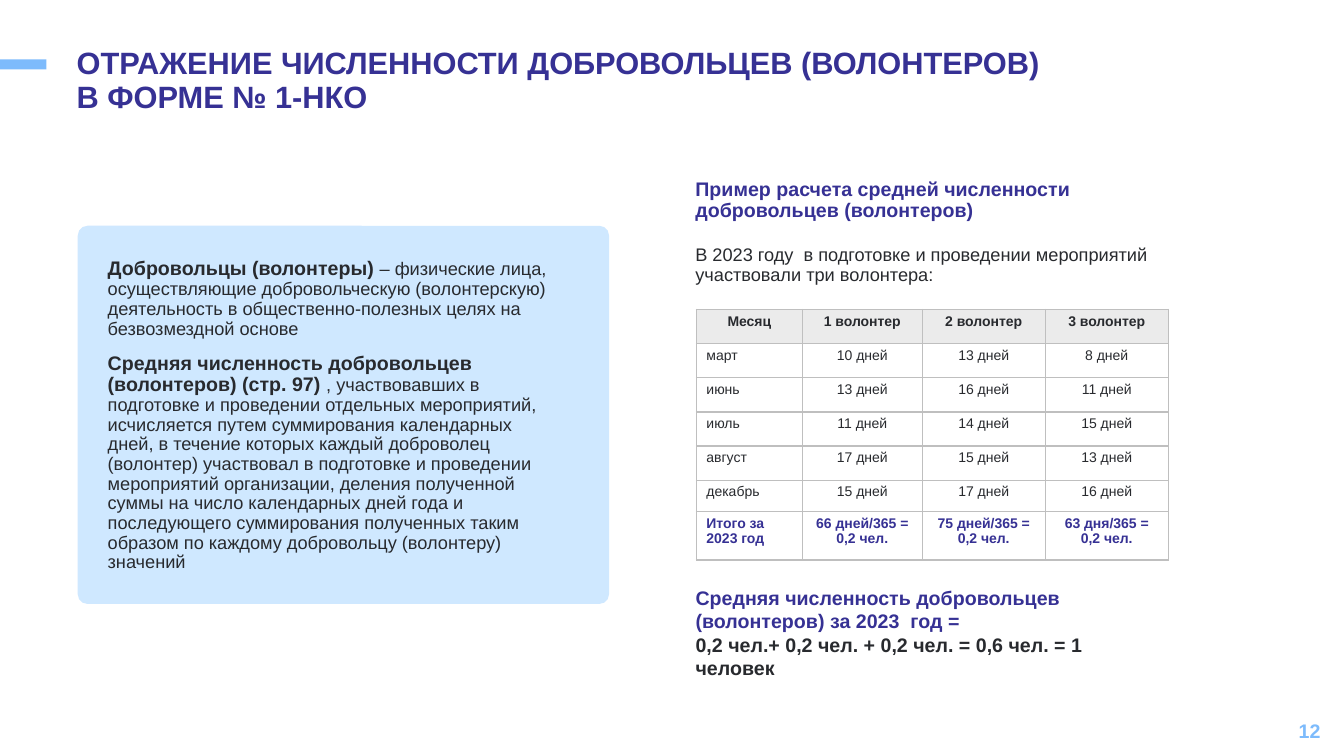
"""Slide on counting volunteers in form 1-НКО."""
import pptx
import pptx.util
import pptx.dml.color
import pptx.enum.shapes
import pptx.enum.text
from lxml import etree

Cm, Pt = pptx.util.Cm, pptx.util.Pt
Shape = pptx.enum.shapes.MSO_SHAPE
Align = pptx.enum.text.PP_ALIGN
Anchor = pptx.enum.text.MSO_ANCHOR
NS = "http://schemas.openxmlformats.org/drawingml/2006/main"
HUES = {"navy": "363194", "sky": "7DBBFC", "pale": "CFE8FF", "ink": "282A2E",
        "head": "EBEBEB", "grid": "BFBFBF", "white": "FFFFFF"}


def tint(name):
    return pptx.dml.color.RGBColor.from_string(HUES[name])


def write(par, runs, align=Align.LEFT, space=None, tab=None):
    props = par._p.get_or_add_pPr()
    props.set("marL", "0")
    props.set("indent", "0")
    etree.SubElement(props, f"{{{NS}}}buNone")
    if tab:
        stops = etree.SubElement(props, f"{{{NS}}}tabLst")
        etree.SubElement(stops, f"{{{NS}}}tab", pos=str(tab), algn="l")
    par.alignment = align
    par.space_before = Pt(0)
    if space:
        par.line_spacing = space
    for text, size, hue, bold in runs:
        run = par.add_run()
        run.text = text
        run.font.name = "Arial"
        run.font.size = Pt(size)
        run.font.bold = bold
        run.font.color.rgb = tint(hue)


deck = pptx.Presentation()
deck.slide_width, deck.slide_height = Cm(33.87), Cm(19.05)
slide = deck.slides.add_slide(deck.slide_layouts[4])
shapes = slide.shapes

for order, (kind, box, hue) in enumerate([
        (Shape.RECTANGLE, (0, 1.5, 1.17, 0.25), "sky"),
        (Shape.ROUNDED_RECTANGLE, (1.96, 5.69, 13.39, 9.53), "pale")]):
    panel = shapes.add_shape(kind, *map(Cm, box))
    panel.shadow.inherit = False
    panel.fill.solid()
    panel.fill.fore_color.rgb = tint(hue)
    panel.line.fill.background()
    if kind == Shape.ROUNDED_RECTANGLE:
        panel.adjustments[0] = 0.026
    shapes._spTree.insert(2 + order, panel._element)

holders = {holder.placeholder_format.idx: holder for holder in slide.placeholders}
texts = {
    0: ((1.68, 1.09, 26.44, 1.45), [
        [("ОТРАЖЕНИЕ ЧИСЛЕННОСТИ ДОБРОВОЛЬЦЕВ (ВОЛОНТЕРОВ)\tВ ФОРМЕ № 1-НКО",
          22, "navy", True)]]),
    1: ((17.27, 4.39, 12.9, 1.6), [
        [("Пример расчета средней численности добровольцев (волонтеров)",
          14, "navy", True)]]),
    2: ((2.46, 6.4, 11.84, 11.76), [
        [("Добровольцы (волонтеры) ", 14, "ink", True),
         ("– физические лица, осуществляющие добровольческую (волонтерскую) "
          "деятельность в общественно-полезных целях на безвозмездной основе",
          13, "ink", False)],
        [("Средняя численность добровольцев (волонтеров) (стр. 97) ", 14, "ink", True),
         (", участвовавших в подготовке и проведении отдельных мероприятий, "
          "исчисляется путем суммирования календарных дней, в течение которых "
          "каждый доброволец (волонтер) участвовал в подготовке и проведении "
          "мероприятий организации, деления полученной суммы на число календарных "
          "дней года и последующего суммирования полученных таким образом по "
          "каждому добровольцу (волонтеру) значений", 13, "ink", False)]]),
    3: ((17.27, 6.07, 12.52, 8.41), [
        [("В 2023 году  в подготовке и проведении мероприятий участвовали три волонтера:",
          13, "ink", False)]]),
}
for key, (box, pars) in texts.items():
    holder = holders[key]
    holder.left, holder.top, holder.width, holder.height = map(Cm, box)
    frame = holder.text_frame
    frame.word_wrap = True
    frame.auto_size = pptx.enum.text.MSO_AUTO_SIZE.NONE
    frame.vertical_anchor = Anchor.TOP
    for place, runs in enumerate(pars):
        par = frame.add_paragraph() if place else frame.paragraphs[0]
        write(par, runs, space=0.9, tab=None if key else Cm(25.3))
        if place:
            par.space_before = Pt(10)
spare = holders[4]._element
spare.getparent().remove(spare)

rows = [
    ("Месяц", "1 волонтер", "2 волонтер", "3 волонтер"),
    ("март", "10 дней", "13 дней", "8 дней"),
    ("июнь", "13 дней", "16 дней", "11 дней"),
    ("июль", "11 дней", "14 дней", "15 дней"),
    ("август", "17 дней", "15 дней", "13 дней"),
    ("декабрь", "15 дней", "17 дней", "16 дней"),
    ("Итого за 2023 год", "66 дней/365 = 0,2 чел.", "75 дней/365 = 0,2 чел.",
     "63 дня/365 = 0,2 чел."),
]
widths = [2.67, 3.02, 3.1, 3.1]
heights = [0.86] * 5 + [0.79, 1.22]
table = shapes.add_table(len(rows), len(widths), Cm(17.55), Cm(7.8),
                         Cm(sum(widths)), Cm(sum(heights))).table
table.first_row = table.horz_banding = False
for col, width in zip(table.columns, widths):
    col.width = Cm(width)
for y, (row, height) in enumerate(zip(rows, heights)):
    table.rows[y].height = Cm(height)
    last = y == len(rows) - 1
    for x, text in enumerate(row):
        cell = table.cell(y, x)
        cell.margin_top = cell.margin_bottom = Cm(0.1)
        props = cell._tc.get_or_add_tcPr()
        for side in ("lnL", "lnR", "lnT", "lnB"):
            edge = etree.SubElement(props, f"{{{NS}}}{side}", w=str(Pt(1)))
            paint = etree.SubElement(edge, f"{{{NS}}}solidFill")
            etree.SubElement(paint, f"{{{NS}}}srgbClr", val=HUES["grid"])
        cell.fill.solid()
        cell.fill.fore_color.rgb = tint("white" if y else "head")
        write(cell.text_frame.paragraphs[0],
              [(text, 10, "navy" if last else "ink", last or y == 0)],
              Align.CENTER if x or y == 0 else Align.LEFT)

total = shapes.add_textbox(Cm(17.53), Cm(14.73), Cm(11.89), Cm(1.83)).text_frame
total.word_wrap = True
total.margin_left = total.margin_right = total.margin_bottom = 0
total.margin_top = Cm(0.03)
write(total.paragraphs[0],
      [("Средняя численность добровольцев (волонтеров) за 2023  год =", 14, "navy", True)])
write(total.add_paragraph(),
      [("0,2 чел.+ 0,2 чел. + 0,2 чел. = 0,6 чел. = 1 человек", 14, "ink", True)])

number = shapes.add_textbox(Cm(25.91), Cm(17.91), Cm(7.62), Cm(1.02)).text_frame
number.word_wrap = True
number.vertical_anchor = Anchor.MIDDLE
write(number.paragraphs[0], [("12", 14, "sky", True)], Align.RIGHT)

deck.save("out.pptx")
